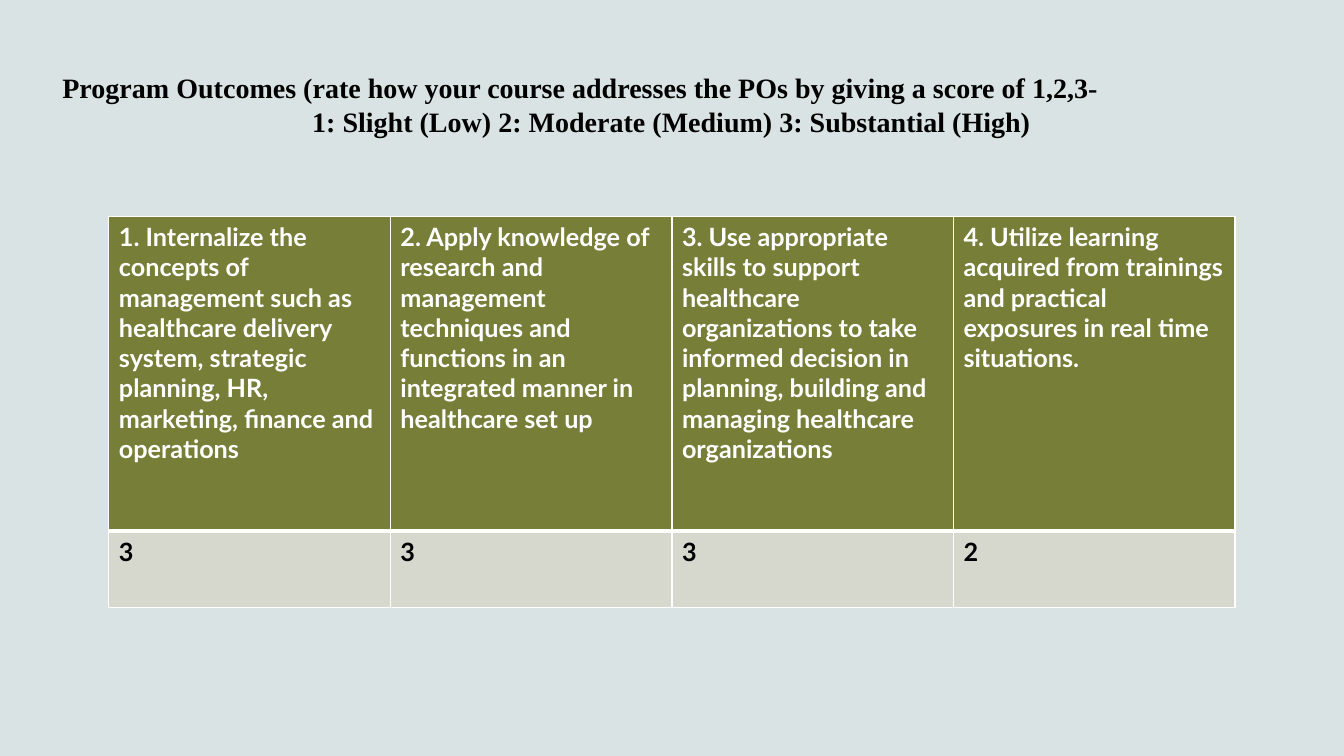
from dataclasses import dataclass

from lxml import etree
from pptx import Presentation
from pptx.dml.color import RGBColor
from pptx.enum.text import MSO_ANCHOR, PP_ALIGN
from pptx.oxml.ns import qn
from pptx.util import Inches, Pt

LEFT, CENTER = PP_ALIGN.LEFT, PP_ALIGN.CENTER
MIDDLE = MSO_ANCHOR.MIDDLE
BLANK_LAYOUT = 6


@dataclass(frozen=True)
class Theme:
    background: str = "DAE3E3"
    header_fill: str = "767E37"
    score_fill: str = "D6D8CE"
    light: str = "FFFFFF"
    dark: str = "000000"
    title_font: str = "Times New Roman"
    table_font: str = "Lato"
    title_size: int = 20
    table_size: int = 18
    thin_line: int = 1
    thick_line: int = 3


THEME = Theme()

TITLE_LINES = [
    ("Program Outcomes (rate how your course addresses the POs by giving a score of 1,2,3-", LEFT),
    ("1: Slight (Low) 2: Moderate (Medium) 3: Substantial (High)", CENTER),
]
OUTCOMES = [
    ("1. Internalize the concepts of management such as healthcare delivery system, "
     "strategic planning, HR, marketing, finance and operations", "3"),
    ("2. Apply knowledge of research and management techniques and functions in an "
     "integrated manner in healthcare set up", "3"),
    ("3. Use appropriate skills to support healthcare organizations to take informed "
     "decision in planning, building and managing healthcare organizations", "3"),
    ("4. Utilize learning acquired from trainings and practical exposures in real time "
     "situations.", "2"),
]


def style_font(font, name, size, color):
    font.name = name
    font.size = Pt(size)
    font.bold = True
    font.color.rgb = RGBColor.from_string(color)


def add_title(page):
    box = page.shapes.add_textbox(Inches(0.52), Inches(0.65), Inches(12.28), Inches(0.77))
    frame = box.text_frame
    frame.word_wrap = True
    frame.vertical_anchor = MIDDLE
    frame.text = "\n".join(text for text, _ in TITLE_LINES)
    for para, (_, alignment) in zip(frame.paragraphs, TITLE_LINES):
        para.alignment = alignment
        style_font(para.font, THEME.title_font, THEME.title_size, THEME.dark)


def set_borders(cell, top, bottom):
    """Draw light cell borders; top and bottom are widths in points."""
    properties = cell._tc.get_or_add_tcPr()
    widths = {"a:lnL": THEME.thin_line, "a:lnR": THEME.thin_line, "a:lnT": top, "a:lnB": bottom}
    for tag, width in widths.items():
        line = etree.SubElement(properties, qn(tag), w=str(Pt(width)))
        fill = etree.SubElement(line, qn("a:solidFill"))
        etree.SubElement(fill, qn("a:srgbClr"), val=THEME.light)


def fill_cell(cell, text, fill, color):
    cell.fill.solid()
    cell.fill.fore_color.rgb = RGBColor.from_string(fill)
    cell.text = text
    style_font(cell.text_frame.paragraphs[0].font, THEME.table_font, THEME.table_size, color)


def add_outcome_table(page):
    frame = page.shapes.add_table(
        2, len(OUTCOMES), Inches(1.08), Inches(2.15), Inches(11.17), Inches(3.88))
    table = frame.table
    for row, height in zip(table.rows, (3.12, 0.76)):
        row.height = Inches(height)
    for column, (outcome, score) in enumerate(OUTCOMES):
        header, rating = table.cell(0, column), table.cell(1, column)
        set_borders(header, THEME.thin_line, THEME.thick_line)
        set_borders(rating, THEME.thick_line, THEME.thin_line)
        fill_cell(header, outcome, THEME.header_fill, THEME.light)
        fill_cell(rating, score, THEME.score_fill, THEME.dark)


def main():
    deck = Presentation()
    deck.slide_width, deck.slide_height = Inches(13.33), Inches(7.5)
    page = deck.slides.add_slide(deck.slide_layouts[BLANK_LAYOUT])
    page.background.fill.solid()
    page.background.fill.fore_color.rgb = RGBColor.from_string(THEME.background)
    add_outcome_table(page)
    add_title(page)
    deck.save("out.pptx")


if __name__ == "__main__":
    main()
